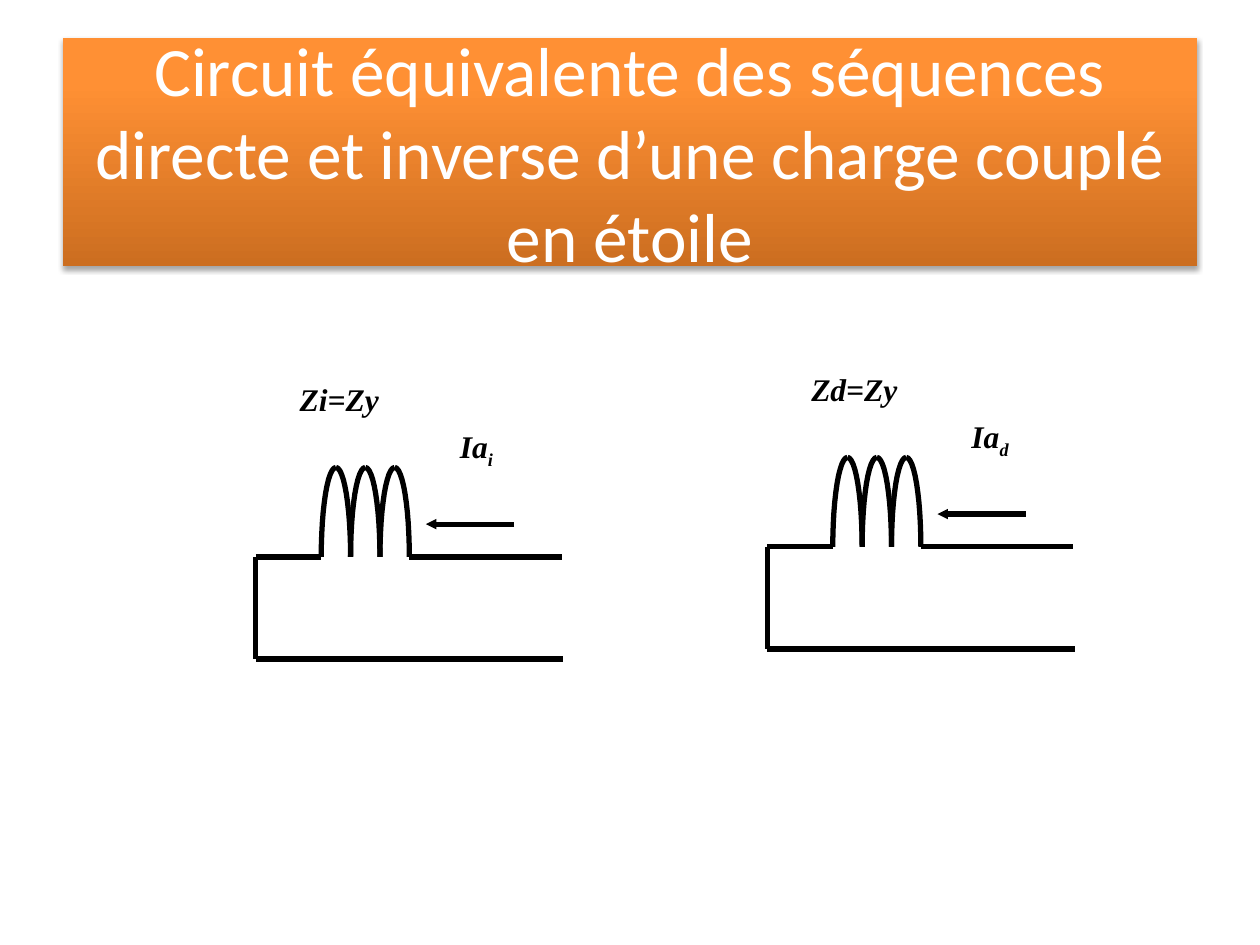
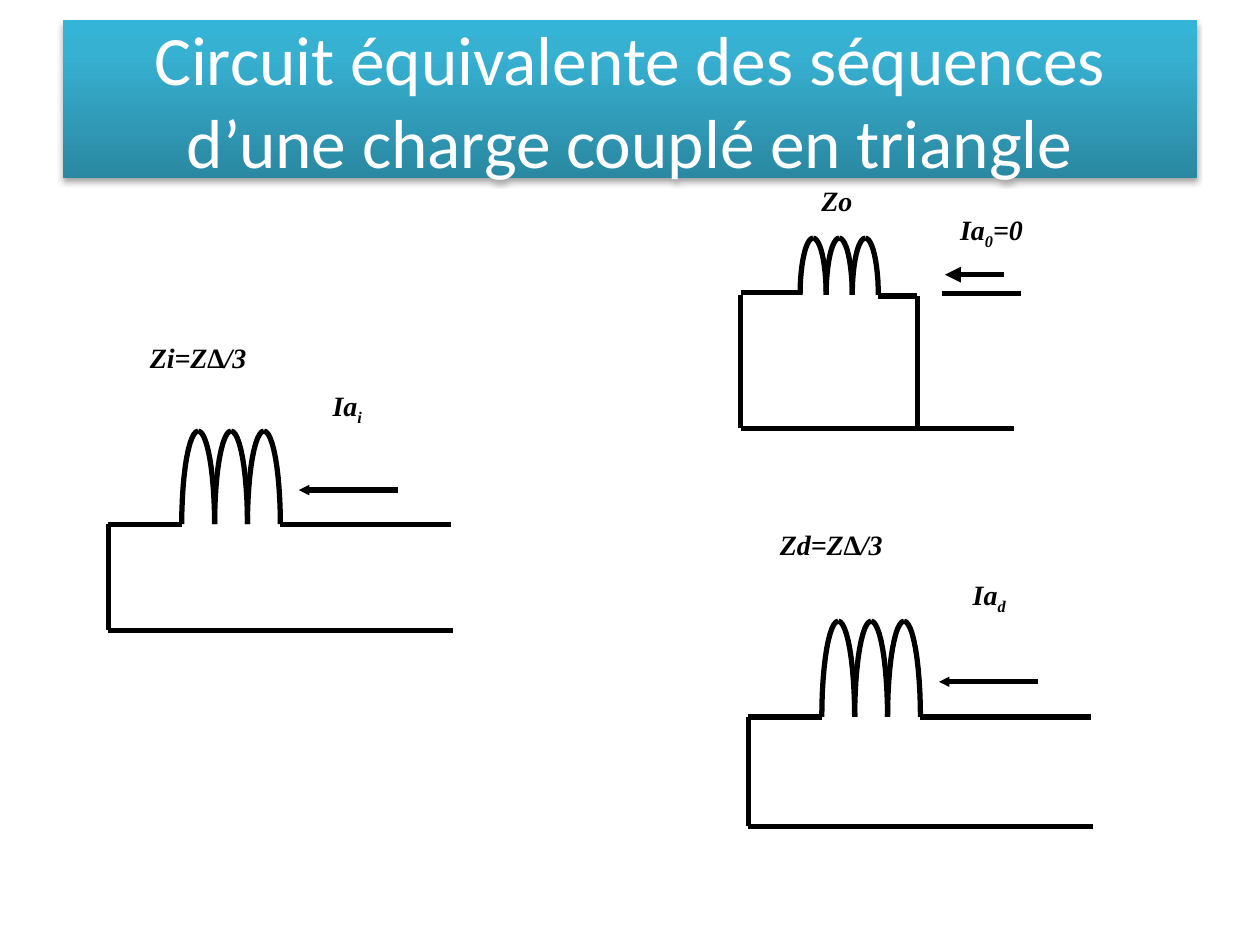
import copy
import math

from pptx import Presentation
from pptx import util as u
from pptx.dml.color import RGBColor
from pptx.enum import shapes, text
from pptx.oxml import parse_xml
from pptx.oxml.ns import nsdecls, qn

INK = "000000"
TITLE_INK = "FFFFFF"
ORANGE_BAND = ("CC6E20", "FF9034", "FF9136")
BLUE_BAND = ("2A88A2", "37B1D2", "34B4D6")
BAND_STOPS = (0, 0.8, 1)
TITLE_FONT, TITLE_SIZE = "Calibri", 39.6
LABEL_FONT = "Times New Roman"
WIRE_WIDTH = 3
TURNS = 3
ARC_STEPS = 12


def rgb(hex_colour):
    return RGBColor.from_string(hex_colour)


def add_titled_slide(prs, title, top, height, band):
    slide = prs.slides.add_slide(prs.slide_layouts[5])
    heading = slide.shapes.title
    heading.left, heading.top = u.Inches(0.5), u.Inches(top)
    heading.width, heading.height = u.Inches(9), u.Inches(height)

    # Three-stop gradient, running from the bottom up
    heading.fill.gradient()
    heading.fill.gradient_angle = 90
    stop_list = heading._element.spPr.find(".//" + qn("a:gsLst"))
    stop_list.insert(1, copy.deepcopy(stop_list[0]))
    for stop, position, colour in zip(heading.fill.gradient_stops, BAND_STOPS, band):
        stop.position = position
        stop.color.rgb = rgb(colour)

    # Soft shadow under the band
    heading._element.spPr.append(parse_xml(
        f'<a:effectLst {nsdecls("a")}>'
        '<a:outerShdw blurRad="40000" dist="23000" dir="5400000" rotWithShape="0">'
        f'<a:srgbClr val="{INK}"><a:alpha val="35000"/></a:srgbClr>'
        '</a:outerShdw></a:effectLst>'))

    frame = heading.text_frame
    frame.text = title
    frame.auto_size = text.MSO_AUTO_SIZE.NONE
    frame.vertical_anchor = text.MSO_ANCHOR.MIDDLE
    paragraph = frame.paragraphs[0]
    paragraph.alignment = text.PP_ALIGN.CENTER
    paragraph.font.name = TITLE_FONT
    paragraph.font.size = u.Pt(TITLE_SIZE)
    paragraph.font.color.rgb = rgb(TITLE_INK)
    return slide


def style_line(line):
    line.color.rgb = rgb(INK)
    line.width = u.Pt(WIRE_WIDTH)


def add_wire(group, x1, y1, x2, y2):
    wire = group.shapes.add_connector(
        shapes.MSO_CONNECTOR.STRAIGHT,
        u.Inches(x1), u.Inches(y1), u.Inches(x2), u.Inches(y2))
    style_line(wire.line)
    wire._element.spPr.append(parse_xml(f'<a:effectLst {nsdecls("a")}/>'))
    return wire


def add_current_arrow(group, start, end, y, head):
    arrow = add_wire(group, start, y, end, y)
    arrow.line._get_or_add_ln().append(parse_xml(
        f'<a:tailEnd {nsdecls("a")} type="triangle" w="{head}" len="{head}"/>'))


def add_coil(group, left, base, turn, height):
    """Each turn is two quarter ellipses that meet at its crest."""
    for index in range(TURNS):
        crest = left + (index + 0.5) * turn
        for side in (-1, 1):
            angles = [math.pi / 2 * step / ARC_STEPS for step in range(ARC_STEPS + 1)]
            points = [(u.Inches(crest + side * turn / 2 * math.sin(angle)),
                       u.Inches(base - height * math.cos(angle))) for angle in angles]
            builder = group.shapes.build_freeform(*points[0])
            builder.add_line_segments(points[1:], close=False)
            arc = builder.convert_to_shape()
            arc.fill.background()
            arc.shadow.inherit = False
            style_line(arc.line)


def add_label(group, left, top, width, height, size, base, sub="", rest="", indent=0):
    box = group.shapes.add_textbox(
        u.Inches(left), u.Inches(top), u.Inches(width), u.Inches(height))
    frame = box.text_frame
    frame.word_wrap = True
    frame.margin_left = u.Inches(0.1 + indent)
    paragraph = frame.paragraphs[0]
    paragraph.space_after = u.Pt(10)
    font = paragraph.font
    font.name, font.size = LABEL_FONT, u.Pt(size)
    font.bold = font.italic = True
    font.color.rgb = rgb(INK)
    for part in filter(None, (base, sub, rest)):
        run = paragraph.add_run()
        run.text = part
        if part == sub:
            run._r.get_or_add_rPr().set("baseline", "-25000")


def add_sequence_circuit(slide, left, wire_y, impedance, sequence, size,
                         z_offset=0.25, sx=1, sy=1):
    """Coil in a loop open on the right; sx and sy stretch it."""
    group = slide.shapes.add_group_shape()
    coil_left, turn = left + 0.52 * sx, 0.233 * sx
    bottom = wire_y + 0.81 * sy
    right = left + 2.43 * sx

    add_coil(group, coil_left, wire_y, turn, 0.71 * sy)
    add_wire(group, coil_left + TURNS * turn, wire_y, right, wire_y)
    add_wire(group, left, wire_y, coil_left, wire_y)
    add_current_arrow(group, left + 2.05 * sx, left + 1.35 * sx, wire_y - 0.26 * sy, "sm")
    add_wire(group, left, bottom, right + 0.01, bottom)
    add_label(group, left + 1.33 * sx, wire_y - 1.08 * sy, 1.05 * sx, 1.22 * sy,
              size, "Ia", sequence, indent=0.19)
    add_label(group, left + z_offset, wire_y - 1.45 * sy, 1.05 * sx, 1.22 * sy,
              size, impedance)
    add_wire(group, left, wire_y, left, bottom)


def add_zero_circuit(slide):
    """Closed loop of the zero sequence, cut off from its supply."""
    group = slide.shapes.add_group_shape()
    left, right, bottom = 5.88, 7.28, 3.4
    add_coil(group, 6.35, 2.34, 0.207, 0.45)
    for ends in (
        (left, 2.32, 6.35, 2.32),
        (left, bottom, 8.05, bottom),
        (left, 2.34, left, 2.6),
        (left, 3.12, left, 3.37),
        (left, 2.37, left, bottom),
        (6.97, 2.35, right, 2.35),
        (right, 2.35, right, 3.38),
        (7.48, 2.33, 8.1, 2.33),
    ):
        add_wire(group, *ends)
    add_current_arrow(group, 7.97, 7.5, 2.18, "med")
    add_label(group, 7.35, 1.64, 0.93, 0.77, 16, "Ia", "0", "=0", indent=0.17)
    add_label(group, 6.42, 1.41, 0.62, 0.77, 16, "Zo")


def main():
    prs = Presentation()
    prs.slide_width, prs.slide_height = u.Inches(10), u.Inches(7.5)

    # Star-connected load
    star = add_titled_slide(
        prs, "Circuit équivalente des séquences directe et inverse "
        "d’une charge couplé en étoile", 0.3, 1.81, ORANGE_BAND)
    add_sequence_circuit(star, 2.03, 4.42, "Zi=Zy", "i", 18)
    add_sequence_circuit(star, 6.09, 4.34, "Zd=Zy", "d", 18)

    # Delta-connected load
    delta = add_titled_slide(
        prs, "Circuit équivalente des séquences d’une charge couplé en triangle",
        0.16, 1.25, BLUE_BAND)
    add_zero_circuit(delta)
    add_sequence_circuit(delta, 5.94, 5.69, "Zd=Z∆/3", "d", 16, 0.15, 1.12, 1.07)
    add_sequence_circuit(delta, 0.86, 4.16, "Zi=Z∆/3", "i", 16, 0.23, 1.12, 1.04)

    prs.save("out.pptx")


if __name__ == "__main__":
    main()
